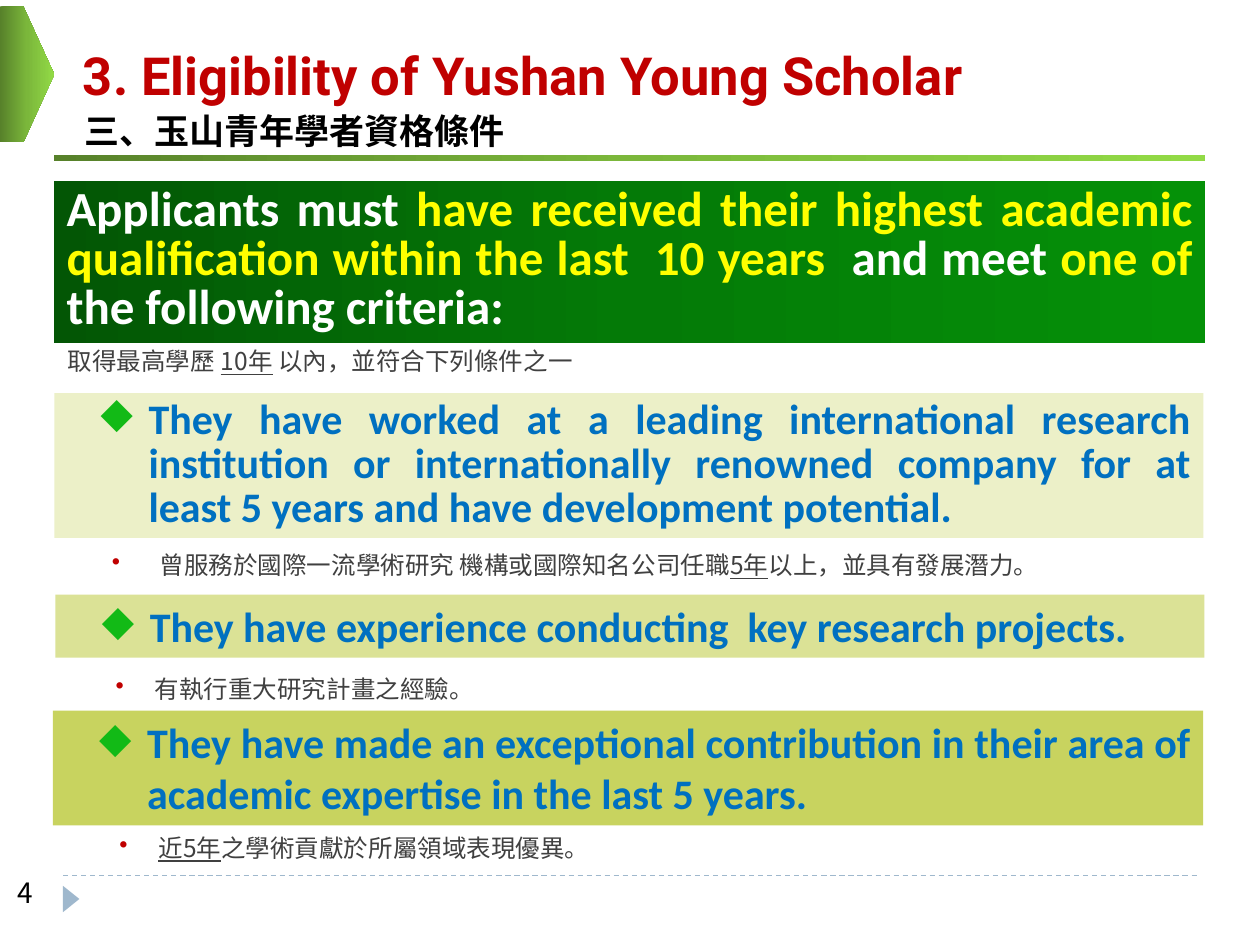
import copy
from dataclasses import dataclass
from typing import Optional

import pptx
import pptx.dml.color
import pptx.enum.dml
import pptx.enum.shapes
import pptx.enum.text
import pptx.oxml
import pptx.oxml.ns
import pptx.util
from lxml import etree

Pt = pptx.util.Pt
RGB = pptx.dml.color.RGBColor
SHAPE = pptx.enum.shapes.MSO_SHAPE
ALIGN = pptx.enum.text.PP_ALIGN
ANCHOR = pptx.enum.text.MSO_ANCHOR
AUTO = pptx.enum.text.MSO_AUTO_SIZE
qn = pptx.oxml.ns.qn

BLACK = RGB(0x00, 0x00, 0x00)
WHITE = RGB(0xFF, 0xFF, 0xFF)
YELLOW = RGB(0xFF, 0xFF, 0x00)
RED = RGB(0xC0, 0x00, 0x00)
BLUE = RGB(0x00, 0x70, 0xC0)
GREY = RGB(0x40, 0x40, 0x40)
STEEL = RGB(0x9F, 0xB8, 0xCD)
BULLET_GREEN = RGB(0x12, 0xBA, 0x16)
PALE, LIGHT, OLIVE = RGB(0xEC, 0xF0, 0xC8), RGB(0xDB, 0xE2, 0x96), RGB(0xC8, 0xD3, 0x5F)
LEAF = [RGB(0x57, 0x81, 0x2A), RGB(0x7B, 0xB7, 0x3B), RGB(0x92, 0xDA, 0x46)]
FOREST = [RGB(0x03, 0x56, 0x05), RGB(0x04, 0x7A, 0x07), RGB(0x05, 0x91, 0x08)]

CJK = "Noto Sans CJK SC"
HEADING = dict(name="Roboto", size=Pt(30), bold=True)
SUBHEADING = dict(name=CJK, size=Pt(20), bold=True)
LEAD = dict(name="Calibri", size=Pt(28), bold=True)
CRITERION = dict(name="Calibri", size=Pt(24), bold=True)
NOTE = dict(name=CJK, size=Pt(14))
NUMBER = dict(name=CJK, size=Pt(16))


@dataclass
class Run:
    text: str
    color: RGB = GREY
    underline: bool = False


@dataclass
class Bullet:
    char: str
    color: RGB
    left: float
    hanging: float


@dataclass
class Box:
    left: float
    top: float
    width: float
    height: float
    runs: list[Run]
    font: dict
    fill: object = None
    bullet: Optional[Bullet] = None
    line_spacing: Optional[float] = None
    justify: bool = False
    title: bool = False


DIAMOND = Bullet("◆", BULLET_GREEN, 46.8, 27.36)
DOT = Bullet("•", RED, 42.48, 22.32)
WIDE_DOT = Bullet("•", RED, 46.8, 27.36)


def paint(sp, fill) -> None:
    """Fill with one colour, or a left-to-right gradient for a list."""
    sp.shadow.inherit = False
    sp.line.fill.background()
    if isinstance(fill, RGB):
        sp.fill.solid()
        sp.fill.fore_color.rgb = fill
        return
    sp.fill.gradient()
    sp.fill.gradient_angle = 0
    gs = sp._element.find(".//" + qn("a:gs"))
    gs.addnext(copy.deepcopy(gs))
    for i, (stop, color) in enumerate(zip(sp.fill.gradient_stops, fill)):
        stop.color.rgb = color
        stop.position = i / (len(fill) - 1)


def add_preset(s, kind, left: float, top: float, width: float, height: float, fill):
    sp = s.shapes.add_shape(kind, Pt(left), Pt(top), Pt(width), Pt(height))
    paint(sp, fill)
    return sp


def set_bullet(p, b: Optional[Bullet]) -> None:
    pPr = p._p.get_or_add_pPr()
    if b is None:
        pPr.set("marL", "0")
        pPr.set("indent", "0")
        return
    p.level = 1
    pPr.set("marL", str(int(Pt(b.left))))
    pPr.set("indent", str(-int(Pt(b.hanging))))
    clr = etree.SubElement(pPr, qn("a:buClr"))
    etree.SubElement(clr, qn("a:srgbClr"), val=str(b.color))
    etree.SubElement(pPr, qn("a:buChar"), char=b.char)


def add_box(s, box: Box) -> None:
    frame = (box.left, box.top, box.width, box.height)
    if box.fill is None:
        sp = s.shapes.add_textbox(*map(Pt, frame))
    else:
        sp = add_preset(s, SHAPE.RECTANGLE, *frame, box.fill)
    tf = sp.text_frame
    tf.word_wrap = True
    tf.auto_size = AUTO.NONE if box.title else AUTO.SHAPE_TO_FIT_TEXT
    tf.vertical_anchor = ANCHOR.MIDDLE if box.title else ANCHOR.TOP
    p = tf.paragraphs[0]
    p.alignment = ALIGN.JUSTIFY if box.justify else ALIGN.LEFT
    if box.line_spacing:
        p.line_spacing = Pt(box.line_spacing)
    set_bullet(p, box.bullet)
    for run in box.runs:
        r = p.add_run()
        r.text = run.text
        for key, value in box.font.items():
            setattr(r.font, key, value)
        r.font.underline = run.underline
        r.font.color.rgb = run.color
        latin = r._r.rPr.find(qn("a:latin"))
        latin.addnext(latin.makeelement(qn("a:ea"), typeface=box.font["name"]))


def criterion(left: float, top: float, width: float, height: float, fill: RGB,
              text: str, spacing: Optional[float] = None) -> Box:
    return Box(left, top, width, height, [Run(text, BLUE)], CRITERION, fill, DIAMOND, spacing, True)


BOXES = [
    # Title, subtitle and page number
    Box(40.3, 15.1, 574.6, 54.7, [Run("3. Eligibility of Yushan Young Scholar", RED)],
        HEADING, title=True),
    Box(41, 60.5, 267.8, 28.1, [Run("三、玉山青年學者資格條件", BLACK)], SUBHEADING, title=True),
    Box(2.9, 496.8, 33.1, 26.6, [Run("4", BLACK)], NUMBER),
    # Lead condition
    Box(31, 103.7, 657.4, 92.2, [
        Run("Applicants must ", WHITE),
        Run("have received their highest academic qualification within the last  10 years  ", YELLOW),
        Run("and meet ", WHITE),
        Run("one of ", YELLOW),
        Run("the following criteria:", WHITE),
    ], LEAD, FOREST, line_spacing=28, justify=True),
    Box(31.7, 194.4, 657.4, 24.5, [
        Run("取得最高學歷 "), Run("10年", underline=True), Run(" 以內，並符合下列條件之一"),
    ], NOTE),
    # Criteria, each followed by its note
    criterion(31, 224.6, 656.6, 82.8, PALE,
              "They have worked at a leading international research institution or "
              "internationally renowned company for at least 5 years and have "
              "development potential.", 25),
    Box(37.4, 311, 653, 24.5, [
        Run("曾服務於國際一流學術研究 機構或國際知名公司任職"),
        Run("5年", underline=True), Run("以上，並具有發展潛力。"),
    ], NOTE, bullet=WIDE_DOT, justify=True),
    criterion(31.7, 339.8, 656.6, 36, LIGHT,
              "They have experience conducting  key research projects."),
    Box(38.9, 381.6, 636.5, 24.5, [Run("有執行重大研究計畫之經驗。")], NOTE, bullet=DOT),
    criterion(30.2, 406.1, 657.4, 65.5, OLIVE,
              "They have made an exceptional contribution in their area of "
              "academic expertise in the last 5 years."),
    Box(41, 472.3, 426.2, 24.5, [
        Run("近5年", underline=True), Run("之學術貢獻於所屬領域表現優異。"),
    ], NOTE, bullet=DOT),
]


def main() -> None:
    prs = pptx.Presentation()
    prs.slide_width, prs.slide_height = Pt(720), Pt(540)
    s = prs.slides.add_slide(prs.slide_layouts[6])

    # Footer rule and marker
    rule = s.shapes.add_connector(pptx.enum.shapes.MSO_CONNECTOR.STRAIGHT,
                                  Pt(36), Pt(500.4), Pt(684), Pt(500.4))
    rule.line.color.rgb = STEEL
    rule.line.width = Pt(0.75)
    rule.line.dash_style = pptx.enum.dml.MSO_LINE.DASH
    etree.SubElement(rule._element.spPr, qn("a:effectLst"))
    marker = add_preset(s, SHAPE.ISOSCELES_TRIANGLE, 33.1, 509, 15.1, 9.4, STEEL)
    marker.rotation = 90

    # Header bar and tab
    add_preset(s, SHAPE.RECTANGLE, 31, 88.6, 657.4, 3.6, LEAF)
    tab = add_preset(s, SHAPE.PENTAGON, 0, 3.6, 31, 77.8, LEAF)
    tab.adjustments[0] = 0.57

    for box in BOXES:
        add_box(s, box)
    prs.save("out.pptx")


if __name__ == "__main__":
    main()
